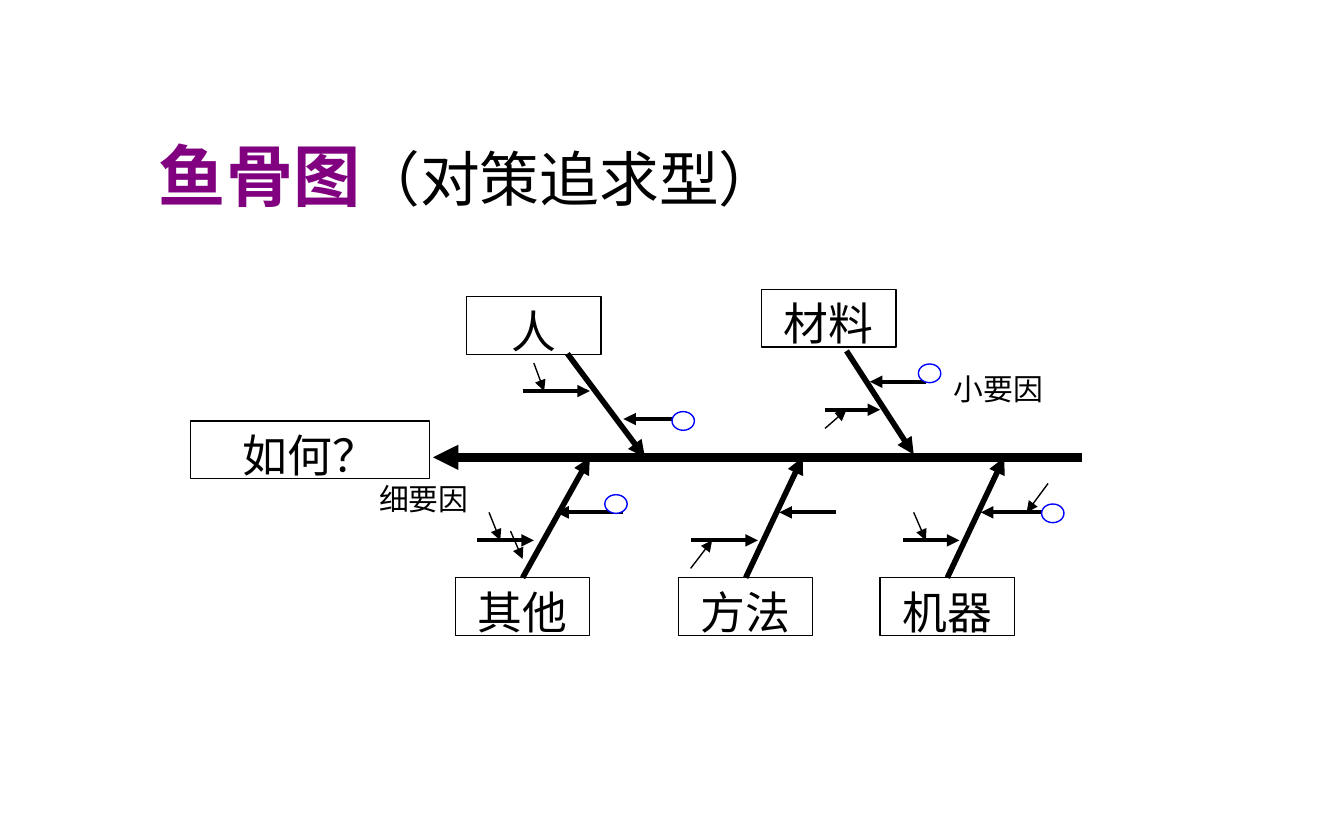
from dataclasses import dataclass

from lxml import etree
from pptx import Presentation
from pptx import util as u
from pptx.dml.color import RGBColor
from pptx.enum import shapes, text
from pptx.oxml.ns import qn

Point = tuple[float, float]


@dataclass(frozen=True)
class Theme:
    ink: RGBColor = RGBColor(0, 0, 0)
    paper: RGBColor = RGBColor(255, 255, 255)
    accent: RGBColor = RGBColor(0x80, 0, 0x80)
    marker: RGBColor = RGBColor(0, 0, 255)
    font: str = "Karla"
    subtitle_font: str = "Times New Roman"
    title_size: float = 36
    subtitle_size: float = 32
    box_size: float = 24
    label_size: float = 16
    spine: float = 4.5
    bone: float = 3
    rib: float = 2.25
    thin: float = 0.75


@dataclass(frozen=True)
class Arrow:
    start: Point
    tip: Point


@dataclass(frozen=True)
class Category:
    name: str
    corner: Point
    bone: Arrow
    ribs: list[Arrow]
    twigs: list[Arrow]
    markers: list[Point]


THEME = Theme()
BOX_WIDTH, BOX_HEIGHT = 72, 31
SPINE_Y = 245
LOWER_TOP = 309.5
NEAR_Y, FAR_Y = 274.5, 289.5  # ribs below the spine


def flat(start_x: float, tip_x: float, y: float) -> Arrow:
    return Arrow((start_x, y), (tip_x, y))


def lower(name: str, left: float, tip_x: float, ribs: list[Arrow],
          twigs: list[Arrow], markers: list[Point]) -> Category:
    """A category below the spine, its bone rising from the box centre."""
    bone = Arrow((left + BOX_WIDTH / 2, LOWER_TOP), (tip_x, SPINE_Y))
    return Category(name, (left, LOWER_TOP), bone, ribs, twigs, markers)


CATEGORIES = [
    Category("人", (250, 159), Arrow((304, 189.5), (345.5, SPINE_Y)),
             [flat(280, 316, 209.5), flat(370, 334, 224.5)],
             [Arrow((286, 194.5), (291.5, 209.5))], [(360, 220.5)]),
    Category("材料", (408, 155), Arrow((453.5, 188), (489.5, 243.5)),
             [flat(496, 466, 204.5), flat(442, 471.5, 219.5)],
             [Arrow((442, 229.5), (453.5, 219.5))], [(492, 195)]),
    lower("其他", 244, 316, [flat(255.5, 286, FAR_Y), flat(334, 298, NEAR_Y)],
          [Arrow((262, NEAR_Y), (268, FAR_Y)),
           Arrow((273.5, 284.5), (280, 299.5))], [(324, 265)]),
    lower("方法", 363.5, 430, [flat(370, 406, FAR_Y), flat(448, 417.5, NEAR_Y)],
          [Arrow((370, 304.5), (381.5, FAR_Y))], []),
    lower("机器", 471.5, 538, [flat(484, 514, FAR_Y), flat(561.5, 525.5, NEAR_Y)],
          [Arrow((561.5, 259), (550, NEAR_Y)),
           Arrow((489.5, NEAR_Y), (496, FAR_Y))], [(558, 270)]),
]


def draw_arrow(slide, arrow: Arrow, width: float) -> None:
    line = slide.shapes.add_connector(
        shapes.MSO_CONNECTOR.STRAIGHT,
        *(u.Pt(v) for v in (*arrow.start, *arrow.tip)))
    line.line.color.rgb = THEME.ink
    line.line.width = u.Pt(width)
    etree.SubElement(line.line._get_or_add_ln(), qn("a:tailEnd"), type="triangle")
    etree.SubElement(line._element.spPr, qn("a:effectLst"))


def draw_box(slide, name: str, corner: Point, width: float = BOX_WIDTH) -> None:
    box = slide.shapes.add_shape(
        shapes.MSO_SHAPE.RECTANGLE,
        *(u.Pt(v) for v in (*corner, width, BOX_HEIGHT)))
    box.shadow.inherit = False
    box.fill.background()
    box.line.color.rgb = THEME.ink
    box.line.width = u.Pt(THEME.thin)
    frame = box.text_frame
    frame.word_wrap = True
    frame.vertical_anchor = text.MSO_ANCHOR.TOP
    paragraph = frame.paragraphs[0]
    paragraph.text = name
    paragraph.alignment = text.PP_ALIGN.CENTER
    style(paragraph.font, THEME.font, THEME.box_size, THEME.ink)


def draw_marker(slide, corner: Point) -> None:
    marker = slide.shapes.add_shape(
        shapes.MSO_SHAPE.OVAL, *(u.Pt(v) for v in (*corner, 12, 10)))
    marker.shadow.inherit = False
    marker.fill.solid()
    marker.fill.fore_color.rgb = THEME.paper
    marker.line.color.rgb = THEME.marker
    marker.line.width = u.Pt(THEME.thin)


def draw_label(slide, wording: str, corner: Point) -> None:
    label = slide.shapes.add_textbox(*(u.Pt(v) for v in (*corner, 78, 22.5)))
    label.text_frame.word_wrap = True
    paragraph = label.text_frame.paragraphs[0]
    paragraph.text = wording
    style(paragraph.font, THEME.font, THEME.label_size, THEME.ink)


def style(font, name: str, size: float, color: RGBColor, bold: bool = False) -> None:
    font.name = name
    font.size = u.Pt(size)
    font.color.rgb = color
    font.bold = bold


def draw_title(slide) -> None:
    title = slide.shapes.add_textbox(*(u.Pt(v) for v in (78, 80, 378, 35)))
    frame = title.text_frame
    frame.word_wrap = True
    frame.vertical_anchor = text.MSO_ANCHOR.BOTTOM
    frame.margin_bottom = 0
    topic, kind = (frame.paragraphs[0].add_run() for _ in range(2))
    topic.text, kind.text = "鱼骨图", "（对策追求型）"
    style(topic.font, THEME.font, THEME.title_size, THEME.accent, bold=True)
    style(kind.font, THEME.subtitle_font, THEME.subtitle_size, THEME.ink)


def main() -> None:
    deck = Presentation()
    deck.slide_width, deck.slide_height = u.Pt(720), u.Pt(450)
    slide = deck.slides.add_slide(deck.slide_layouts[6])
    draw_title(slide)

    # Question and spine
    draw_box(slide, "如何？", (102, 225.5), 128)
    draw_arrow(slide, flat(579.5, 232, SPINE_Y), THEME.spine)

    # Categories with their causes
    for category in CATEGORIES:
        draw_box(slide, category.name, category.corner)
        draw_arrow(slide, category.bone, THEME.bone)
        for rib in category.ribs:
            draw_arrow(slide, rib, THEME.rib)
        for twig in category.twigs:
            draw_arrow(slide, twig, THEME.thin)
        for marker in category.markers:
            draw_marker(slide, marker)

    # Labels for the cause levels
    draw_label(slide, "小要因", (504, 195))
    draw_label(slide, "细要因", (196, 254))
    deck.save("out.pptx")


if __name__ == "__main__":
    main()
